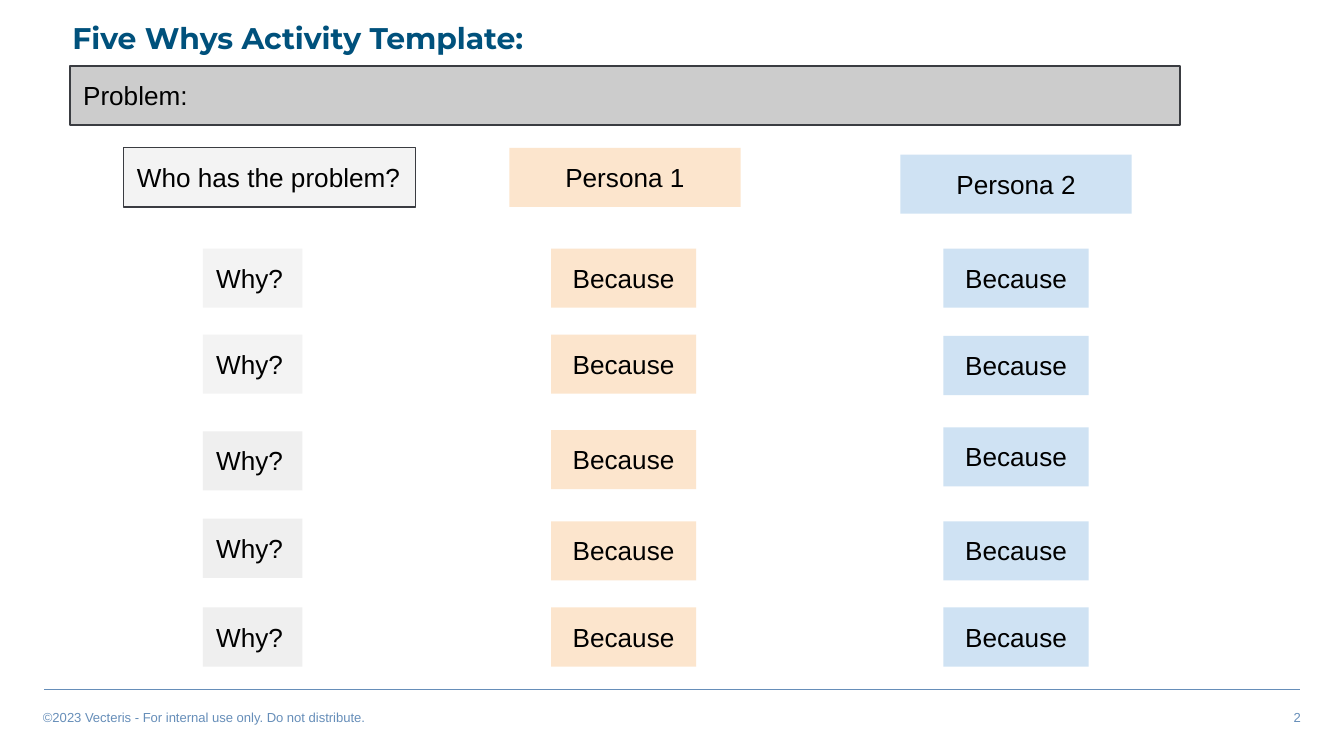
import pptx
import pptx.dml.color
import pptx.enum.shapes
import pptx.enum.text
import pptx.oxml
import pptx.util

Inches = pptx.util.Inches
Align = pptx.enum.text.PP_ALIGN
BOX_HEIGHT = 0.44
GRAY, PALE_GRAY, LIGHT_GRAY = "CCCCCC", "F3F3F3", "EFEFEF"
PEACH, SKY = "FCE5CD", "CFE2F3"
OUTLINE, NAVY, STEEL = "3A3C41", "00517C", "668EB9"


def color(value):
    """Return the colour for a hex string."""
    return pptx.dml.color.RGBColor.from_string(value)


def write_text(shape, text, size=14, font="Arial", fill="000000", bold=False,
               align=Align.LEFT, insets=(0.1, 0.1)):
    """Write one formatted paragraph in a shape."""
    frame = shape.text_frame
    frame.word_wrap = True
    frame.vertical_anchor = pptx.enum.text.MSO_ANCHOR.TOP
    frame.margin_left = frame.margin_right = Inches(insets[0])
    frame.margin_top = frame.margin_bottom = Inches(insets[1])
    paragraph = frame.paragraphs[0]
    paragraph.alignment = align
    run = paragraph.add_run()
    run.text = text
    run.font.size = pptx.util.Pt(size)
    run.font.name = font
    run.font.bold = bold
    run.font.color.rgb = color(fill)


def add_text(slide, box, text, **text_format):
    """Add a text box."""
    shape = slide.shapes.add_textbox(*map(Inches, box))
    write_text(shape, text, **text_format)


def add_box(slide, box, text, fill, outline=None, **text_format):
    """Add a filled rectangle with text and an optional outline."""
    shape = slide.shapes.add_shape(
        pptx.enum.shapes.MSO_SHAPE.RECTANGLE, *map(Inches, box))
    shape.shadow.inherit = False
    shape.fill.solid()
    shape.fill.fore_color.rgb = color(fill)
    if outline:
        shape.line.color.rgb = color(outline)
        shape.line.width = pptx.util.Pt(0.75)
    else:
        shape.line.fill.background()
    write_text(shape, text, **text_format)


def add_footer(slide, left, top, width):
    """Add the rule, the copyright line and the slide number."""
    rule = slide.shapes.add_connector(
        pptx.enum.shapes.MSO_CONNECTOR.STRAIGHT,
        Inches(left), Inches(top), Inches(left + width), Inches(top))
    rule.line.color.rgb = color(STEEL)
    rule.line.width = pptx.util.Pt(1)
    rule._element.spPr.append(pptx.oxml.parse_xml(
        '<a:effectLst xmlns:a="http://schemas.openxmlformats.org/drawingml/2006/main"/>'))
    text_top, text_width, text_height, overhang = top + 0.11, 4, 0.19, 0.08
    small = {"size": 7, "fill": STEEL, "insets": (0.07, 0.04)}
    add_text(slide, (left - overhang, text_top, text_width, text_height),
             "©2023 Vecteris - For internal use only. Do not distribute.", **small)
    add_text(slide, (left + width + overhang - text_width, text_top, text_width, text_height),
             "2", align=Align.RIGHT, **small)


def add_header(slide, left, top, width):
    """Add the title and the problem bar below it."""
    add_box(slide, (left, top + 0.44, width, BOX_HEIGHT), "Problem:", GRAY, OUTLINE)
    add_text(slide, (left - 0.08, top, 5.15, 0.47), "Five Whys Activity Template:",
             size=16, font="Montserrat", fill=NAVY, bold=True)


def add_column(slide, box, heading, label, label_box, label_tops, fills,
               outline=None, align=Align.CENTER):
    """Add a heading with a stack of labels indented beneath it."""
    left, top, width = box
    indent, label_width = label_box
    add_box(slide, (left, top, width, BOX_HEIGHT), heading, fills[0], outline, align=align)
    for label_top, fill in zip(label_tops, fills):
        add_box(slide, (left + indent, top + label_top, label_width, BOX_HEIGHT), label, fill,
                align=align)


def main():
    """Build the slide and save it."""
    presentation = pptx.Presentation()
    presentation.slide_width = Inches(10)
    presentation.slide_height = presentation.slide_width * 9 // 16
    slide = presentation.slides.add_slide(presentation.slide_layouts[6])
    add_footer(slide, 0.33, 5.13, 9.34)
    add_header(slide, 0.52, 0.05, 8.26)
    add_column(slide, (0.92, 1.1, 2.17), "Who has the problem?", "Why?", (0.59, 0.74),
               (0.75, 1.39, 2.11, 2.76, 3.42), [PALE_GRAY] * 2 + [LIGHT_GRAY] * 3,
               outline=OUTLINE, align=Align.LEFT)
    personas = (
        ("Persona 1", 3.79, 1.1, 0.31, PEACH, (0.75, 1.39, 2.1, 2.78, 3.42)),
        ("Persona 2", 6.7, 1.15, 0.32, SKY, (0.7, 1.35, 2.03, 2.73, 3.37)),
    )
    for name, left, top, indent, fill, label_tops in personas:
        add_column(slide, (left, top, 1.72), name, "Because", (indent, 1.08),
                   label_tops, [fill] * 5)
    presentation.save("out.pptx")


if __name__ == "__main__":
    main()
